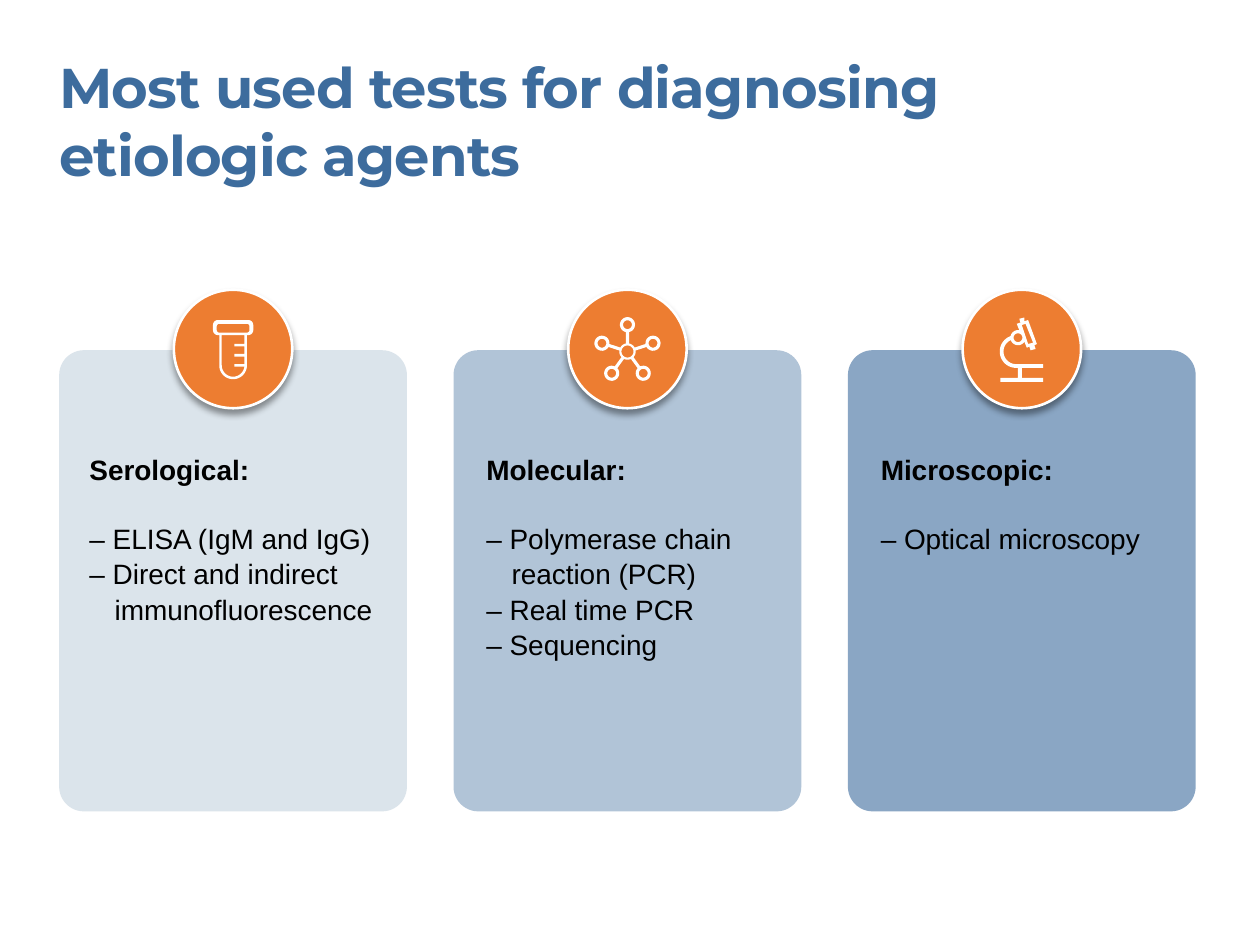
from math import cos, pi, radians, sin

from lxml.etree import SubElement
from pptx import Presentation
from pptx.dml.color import RGBColor
from pptx.enum.shapes import MSO_SHAPE as Shape
from pptx.enum.text import MSO_ANCHOR as Anchor, MSO_AUTO_SIZE as AutoSize, PP_ALIGN as Align
from pptx.oxml.ns import qn
from pptx.util import Inches, Pt

BLUE = RGBColor(0x3D, 0x6C, 0x9D)
PALE = RGBColor(0xDB, 0xE4, 0xEB)
ORANGE = RGBColor(0xED, 0x7D, 0x31)
WHITE = RGBColor(0xFF, 0xFF, 0xFF)
BLACK = RGBColor(0, 0, 0)

TITLE = "Most used tests for diagnosing etiologic agents"
CARD_LEFT, CARD_TOP, CARD_WIDTH, CARD_HEIGHT, CARD_PITCH = 0.47, 2.78, 2.76, 3.66, 3.13
BADGE_SIZE, BADGE_TOP = 0.94, 2.3
TEXT_TOP, TEXT_WIDTH, LINE_HEIGHT = 3.58, 2.31, 0.27


def arc(x, y, radius, start, end, steps=24):
    angles = [radians(start + (end - start) * i / steps) for i in range(steps + 1)]
    return [(x + radius * cos(a), y + radius * sin(a)) for a in angles]


def rounded(left, top, right, bottom, radius):
    corners = [(left + radius, top + radius, 180), (right - radius, top + radius, 270),
               (right - radius, bottom - radius, 0), (left + radius, bottom - radius, 90)]
    return [point for x, y, a in corners for point in arc(x, y, radius, a, a + 90, 6)]


def tube_icon():
    cap = rounded(-0.16, -0.23, 0.16, -0.11, 0.04)
    cap_hole = rounded(-0.13, -0.2, 0.13, -0.13, 0.02)
    body = [(-0.11, -0.11), (0.11, -0.11)] + arc(0, 0.13, 0.11, 0, 180)
    hole = [(-0.09, -0.11), (0.09, -0.11)]
    for y in (-0.04, 0.04, 0.12):
        hole += [(0.09, y), (0.01, y), (0.01, y + 0.02), (0.09, y + 0.02)]
    return [cap, cap_hole, body, hole + arc(0, 0.13, 0.09, 0, 180)]


def molecule_icon():
    hub_y, hub_radius, node_radius, reach = 0.02, 0.065, 0.06, 0.213
    outline, holes = [], [arc(0, hub_y, 0.048, 0, 360)]
    for angle in range(-90, 270, 72):
        x = reach * cos(radians(angle))
        y = hub_y + reach * sin(radians(angle))
        outline += arc(x, y, node_radius, angle + 192, angle + 528)
        outline += arc(0, hub_y, hub_radius, angle + 11, angle + 61, 8)
        holes.append(arc(x, y, 0.035, 0, 360))
    return [outline] + holes


def microscope_icon():
    outline = [(-0.17, 0.26), (-0.17, 0.23), (-0.03, 0.23), (-0.03, 0.15)]
    outline += arc(-0.045, 0.02, 0.13, 90, 250)
    outline += arc(-0.03, -0.09, 0.06, 190, 280)
    outline += [(-0.04, -0.2), (-0.01, -0.21), (-0.02, -0.24), (0.02, -0.25), (0.02, -0.22),
                (0.05, -0.23), (0.12, -0.04), (0.1, -0.03), (0.11, 0), (0.07, 0.01),
                (0.06, -0.02), (0.04, -0.01), (0.02, -0.06)]
    outline += arc(-0.03, -0.09, 0.06, 35, 160)
    outline += arc(-0.045, 0.02, 0.1, 245, 90)
    outline += [(0.17, 0.12), (0.17, 0.15), (0, 0.15), (0, 0.23), (0.17, 0.23), (0.17, 0.26)]
    window = [(0.05, -0.04), (0.09, -0.05), (0.03, -0.2), (0, -0.19)]
    return [outline, window, arc(-0.03, -0.09, 0.035, 0, 360)]


CARDS = [
    ("Serological:", ["– ELISA (IgM and IgG)", "– Direct and indirect immunofluorescence"],
     PALE, 100, 0.24, 5, tube_icon),
    ("Molecular:", ["– Polymerase chain reaction (PCR)", "– Real time PCR", "– Sequencing"],
     BLUE, 40, 0.26, 6, molecule_icon),
    ("Microscopic:", ["– Optical microscopy"], BLUE, 60, 0.26, 3, microscope_icon),
]


def place(shape, left, top, width, height):
    shape.left, shape.top = Inches(left), Inches(top)
    shape.width, shape.height = Inches(width), Inches(height)


def prepare(frame):
    frame.margin_left = frame.margin_right = frame.margin_top = frame.margin_bottom = 0
    frame.word_wrap = True
    frame.auto_size = AutoSize.SHAPE_TO_FIT_TEXT
    frame.vertical_anchor = Anchor.TOP


def write(para, text, font, size, color, bold=False, tracking=None):
    para.alignment = Align.LEFT
    span = para.add_run()
    span.text = text
    span.font.name, span.font.size, span.font.bold = font, Pt(size), bold
    span.font.color.rgb = color
    if tracking:
        span.font._element.set("spc", str(int(tracking * 100)))


def add_alpha(color_element, percent):
    SubElement(color_element, qn("a:alpha"), val=str(percent * 1000))


def add_filled(page, kind, area, color):
    shape = page.shapes.add_shape(kind, *map(Inches, area))
    shape.shadow.inherit = False
    shape.fill.solid()
    shape.fill.fore_color.rgb = color
    shape.line.fill.background()
    return shape


def add_card(page, left, color, opacity):
    card = add_filled(page, Shape.ROUNDED_RECTANGLE,
                      (left, CARD_TOP, CARD_WIDTH, CARD_HEIGHT), color)
    card.adjustments[0] = 0.071
    if opacity < 100:
        add_alpha(card._element.spPr.find(".//" + qn("a:srgbClr")), opacity)


def add_badge(page, center):
    badge = add_filled(page, Shape.OVAL,
                       (center - BADGE_SIZE / 2, BADGE_TOP, BADGE_SIZE, BADGE_SIZE), ORANGE)
    badge.line.color.rgb, badge.line.width = WHITE, Pt(1.5)
    effects = badge._element.spPr.find(qn("a:effectLst"))
    shadow = SubElement(effects, qn("a:outerShdw"), blurRad=str(Pt(4)), dist=str(Pt(3)),
                        dir="5400000", algn="t", rotWithShape="0")
    add_alpha(SubElement(shadow, qn("a:srgbClr"), val=str(BLACK)), 40)


def add_icon(page, center_x, center_y, contours):
    builder = None
    for contour in contours:
        points = [(Inches(center_x + x), Inches(center_y + y)) for x, y in contour]
        if builder is None:
            builder = page.shapes.build_freeform(*points[0])
        else:
            builder.move_to(*points[0])
        builder.add_line_segments(points[1:], close=True)
    icon = builder.convert_to_shape()
    icon.shadow.inherit = False
    icon.fill.solid()
    icon.fill.fore_color.rgb = WHITE
    icon.line.fill.background()


def add_tests(page, left, heading, tests, lines):
    box = page.shapes.add_textbox(Inches(left), Inches(TEXT_TOP), Inches(TEXT_WIDTH),
                                  Inches(lines * LINE_HEIGHT))
    frame = box.text_frame
    prepare(frame)
    first = frame.paragraphs[0]
    write(first, heading, "Arial", 16, BLACK, bold=True)
    first.line_spacing = 1.05
    first.space_after = Pt(19.3)
    for test in tests:
        para = frame.add_paragraph()
        write(para, test, "Arial", 16, BLACK)
        para.line_spacing = 1.05
        properties = para._p.get_or_add_pPr()
        properties.set("marL", str(Inches(0.2)))
        properties.set("indent", str(-Inches(0.2)))


def main():
    deck = Presentation()
    deck.slide_width, deck.slide_height = Inches(10), Inches(7.5)
    page = deck.slides.add_slide(deck.slide_layouts[5])
    title = page.shapes.title
    place(title, 0.47, 0.42, 8.55, 1.08)
    prepare(title.text_frame)
    write(title.text_frame.paragraphs[0], TITLE, "Montserrat", 32, BLUE, bold=True, tracking=-0.5)

    for column, (heading, tests, color, opacity, inset, lines, icon) in enumerate(CARDS):
        left = CARD_LEFT + column * CARD_PITCH
        center = left + CARD_WIDTH / 2
        add_card(page, left, color, opacity)
        add_badge(page, center)
        add_tests(page, left + inset, heading, tests, lines)
        add_icon(page, center, BADGE_TOP + BADGE_SIZE / 2, icon())
    deck.save("out.pptx")


if __name__ == "__main__":
    main()
